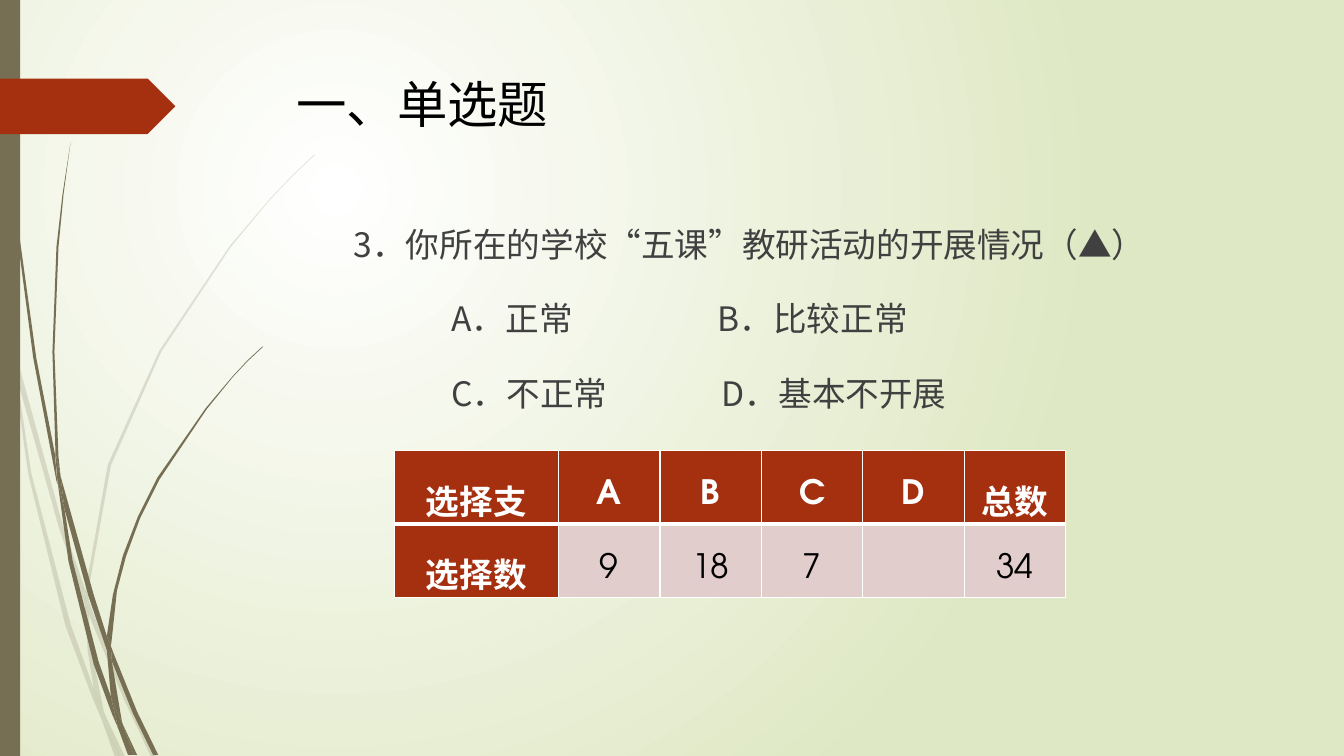
"""Build the survey slide for single-choice question 3 with its table of answers."""
import lxml.etree
import pptx
import pptx.dml.color
import pptx.enum.shapes
import pptx.enum.text
import pptx.oxml
import pptx.oxml.ns
import pptx.util

rgb = pptx.dml.color.RGBColor.from_string
qn = pptx.oxml.ns.qn
Inches = pptx.util.Inches
Pt = pptx.util.Pt
BROWN, RED, WHITE, BLACK = "766F54", "A53010", "FFFFFF", "000000"
CHINESE, LATIN = "Noto Sans CJK SC", "TeX Gyre Adventor"


def add_run(paragraph, text, size, color, font, bold=False):
    """Add one formatted run to a paragraph."""
    run = paragraph.add_run()
    run.text = text
    run.font.size = Pt(size)
    run.font.bold = bold
    run.font.color.rgb = rgb(color)
    run.font.name = font
    east_asian = lxml.etree.SubElement(run.font._element, qn("a:ea"))
    east_asian.set("typeface", CHINESE)


def fill_plain(shape, color):
    """Give a shape a solid fill without line or shadow."""
    shape.shadow.inherit = False
    shape.line.fill.background()
    shape.fill.solid()
    shape.fill.fore_color.rgb = rgb(color)


presentation = pptx.Presentation()
presentation.slide_width = Inches(13.33)
presentation.slide_height = Inches(7.5)
slide = presentation.slides.add_slide(presentation.slide_layouts[6])

background = slide.background.fill
background.gradient()
for stop, position, color in zip(background.gradient_stops, (0, 1), (WHITE, "DFE8C4")):
    stop.position = position
    stop.color.rgb = rgb(color)
linear = next(slide.element.iter(qn("a:lin")))
circle = pptx.oxml.parse_xml(
    f'<a:path {pptx.oxml.ns.nsdecls("a")} path="circle">'
    '<a:fillToRect l="50000" t="50000" r="100000" b="100000"/></a:path>'
)
linear.getparent().replace(linear, circle)

pale_blades = [
    [(.11, 3.5), (.09, 3.22), (0, 2.82), (0, 2.99), (.1, 3.44)],
    [(.58, 5.22), (.84, 5.99), (.85, 5.86), (.62, 5.2), (.14, 3.45), (.17, 3.76)],
    [(.92, 6.07), (.88, 5.96), (.88, 6.1), (1.23, 6.94), (1.5, 7.51), (1.55, 7.51),
     (1.27, 6.92)],
    [(1.19, 7.51), (1.24, 7.51), (1.05, 7.11)],
    [(.93, 6.83), (.7, 6.19), (.31, 4.69), (.17, 3.76), (.11, 3.5), (.28, 4.7),
     (.65, 6.21), (.92, 6.93), (1.01, 7.14), (.99, 7.07)],
    [(.84, 5.99), (.87, 6.46), (.93, 6.83), (.96, 6.92), (1.05, 7.11), (1.03, 7.06),
     (.91, 6.46), (.88, 6.1), (.88, 6.08)],
    [(.88, 5.84), (1.1, 4.62), (1.6, 3.49), (2.29, 2.45), (2.68, 1.98), (2.9, 1.75),
     (3.12, 1.54), (3.12, 1.53), (2.89, 1.75), (2.68, 1.97), (2.28, 2.44),
     (1.58, 3.48), (1.07, 4.61), (.85, 5.84), (.85, 5.86), (.88, 5.96)],
    [(1.01, 7.14), (1.14, 7.51), (1.19, 7.51)],
    [(.88, 6.08), (.88, 6.1), (.88, 5.96), (.85, 5.86), (.84, 5.99)],
    [(.96, 6.92), (.93, 6.83), (.99, 7.07), (1.01, 7.14), (1.19, 7.51), (1.05, 7.11)],
]
dark_blades = [
    [(.07, 1.1), (.17, 2.33), (.33, 3.55), (.56, 4.77), (.57, 4.81), (.55, 4.57),
     (.55, 4.53), (.36, 3.55), (.19, 2.32), (.08, 1.09), (.05, .48), (.04, 0),
     (.03, 0), (.04, .48)],
    [(.88, 5.92), (1.06, 6.45), (1.06, 6.31), (.93, 5.9), (.6, 4.72), (.64, 5.05)],
    [(1.13, 6.49), (1.1, 6.41), (1.11, 6.56), (1.32, 7.08), (1.52, 7.49), (1.57, 7.49),
     (1.36, 7.06)],
    [(1.1, 6.91), (.98, 6.57), (.72, 5.56), (.64, 5.05), (.57, 4.77), (.68, 5.57),
     (.93, 6.59), (1.11, 7.08), (1.17, 7.22), (1.16, 7.17)],
    [(.6, 4.72), (.58, 4.53), (.54, 3.49), (.58, 2.45), (.63, 1.93), (.7, 1.41),
     (.62, 1.93), (.56, 2.45), (.52, 3.49), (.55, 4.49)],
    [(1.33, 7.49), (1.36, 7.49), (1.22, 7.19)],
    [(.57, 4.77), (.64, 5.05), (.6, 4.72), (.55, 4.49), (.55, 4.53)],
    [(1.11, 6.33), (1.16, 5.86), (1.25, 5.52), (1.39, 5.14), (1.58, 4.76), (2.05, 4.06),
     (2.31, 3.74), (2.45, 3.59), (2.61, 3.44), (2.6, 3.44), (2.45, 3.58), (2.31, 3.73),
     (2.04, 4.05), (1.56, 4.74), (1.37, 5.12), (1.22, 5.51), (1.12, 5.9), (1.06, 6.31),
     (1.1, 6.41)],
    [(1.17, 7.22), (1.27, 7.49), (1.31, 7.49)],
    [(1.06, 6.45), (1.1, 6.91), (1.16, 7.06), (1.22, 7.19), (1.21, 7.16), (1.11, 6.56),
     (1.09, 6.51)],
    [(1.06, 6.45), (1.09, 6.51), (1.11, 6.56), (1.1, 6.41), (1.06, 6.31)],
    [(1.16, 7.06), (1.1, 6.91), (1.16, 7.17), (1.17, 7.22), (1.3, 7.49), (1.33, 7.49),
     (1.22, 7.19)],
]
for opacity, blades in ((20, pale_blades), (100, dark_blades)):
    for blade_points in blades:
        outline = [(Inches(x), Inches(y)) for x, y in blade_points]
        builder = slide.shapes.build_freeform(*outline[0])
        builder.add_line_segments(outline[1:])
        blade = builder.convert_to_shape()
        fill_plain(blade, BROWN)
        if opacity < 100:
            blade_color = next(blade.element.iter(qn("a:srgbClr")))
            alpha = lxml.etree.SubElement(blade_color, qn("a:alpha"))
            alpha.set("val", str(opacity * 1000))

shape_types = pptx.enum.shapes.MSO_SHAPE
for shape_type, top, width, height, color in [
    (shape_types.RECTANGLE, 0, .2, 7.5, BROWN),
    (shape_types.PENTAGON, .78, 1.74, .55, RED),
]:
    shape = slide.shapes.add_shape(shape_type, 0, Inches(top), Inches(width), Inches(height))
    fill_plain(shape, color)

title = slide.shapes.add_textbox(Inches(2.84), Inches(.68), Inches(9.75), Inches(1.4))
title.text_frame.word_wrap = True
add_run(title.text_frame.paragraphs[0], "一、单选题", 36, BLACK, CHINESE)

question = slide.shapes.add_textbox(Inches(3.41), Inches(1.97), Inches(9.75), Inches(2.42))
question.text_frame.word_wrap = True
question_lines = [
    ("3．你所在的学校“五课”教研活动的开展情况（▲）", []),
    ("\tA．正常\tB．比较正常", [.97, 3.61]),
    ("\tC．不正常\tD．基本不开展", [.97, 3.65]),
]
for index, (line, tab_positions) in enumerate(question_lines):
    frame = question.text_frame
    paragraph = frame.add_paragraph() if index else frame.paragraphs[0]
    paragraph.line_spacing = 1.5
    paragraph.space_before = Pt(10)
    if tab_positions:
        tabs = lxml.etree.SubElement(paragraph._p.get_or_add_pPr(), qn("a:tabLst"))
        for position in tab_positions:
            tab = lxml.etree.SubElement(tabs, qn("a:tab"))
            tab.set("pos", str(Inches(position)))
            tab.set("algn", "l")
    add_run(paragraph, line, 24, "404040", CHINESE)

answers = [
    ["选择支", "A", "B", "C", "D", "总数"],
    ["选择数", "9", "18", "7", "", "34"],
]
table = slide.shapes.add_table(
    2, 6, Inches(3.91), Inches(4.47), Inches(6.66), Inches(1.46)
).table
for index, column in enumerate(table.columns):
    column.width = Inches((6.66 - 1.63) / 5 if index else 1.63)
for row_index, values in enumerate(answers):
    table.rows[row_index].height = Inches(.73)
    for column_index, value in enumerate(values):
        heading = row_index == 0 or column_index == 0
        cell = table.cell(row_index, column_index)
        cell.vertical_anchor = pptx.enum.text.MSO_ANCHOR.MIDDLE
        cell.margin_left = cell.margin_right = Inches(.07)
        cell.margin_top = cell.margin_bottom = 0
        cell.fill.solid()
        cell.fill.fore_color.rgb = rgb(RED if heading else "E1CDCC")
        paragraph = cell.text_frame.paragraphs[0]
        paragraph.alignment = pptx.enum.text.PP_ALIGN.CENTER
        paragraph.line_spacing = 1.5
        if value:
            add_run(paragraph, value, 24, WHITE if heading else BLACK, LATIN, heading)
        header_edge = "lnT" if row_index else "lnB"
        for position, side in enumerate(("lnL", "lnR", "lnT", "lnB")):
            width = Pt(3 if side == header_edge else 1)
            border = pptx.oxml.parse_xml(
                f'<a:{side} {pptx.oxml.ns.nsdecls("a")} w="{width}"><a:solidFill>'
                f'<a:srgbClr val="{WHITE}"/></a:solidFill></a:{side}>'
            )
            cell._tc.get_or_add_tcPr().insert(position, border)

presentation.save("out.pptx")
